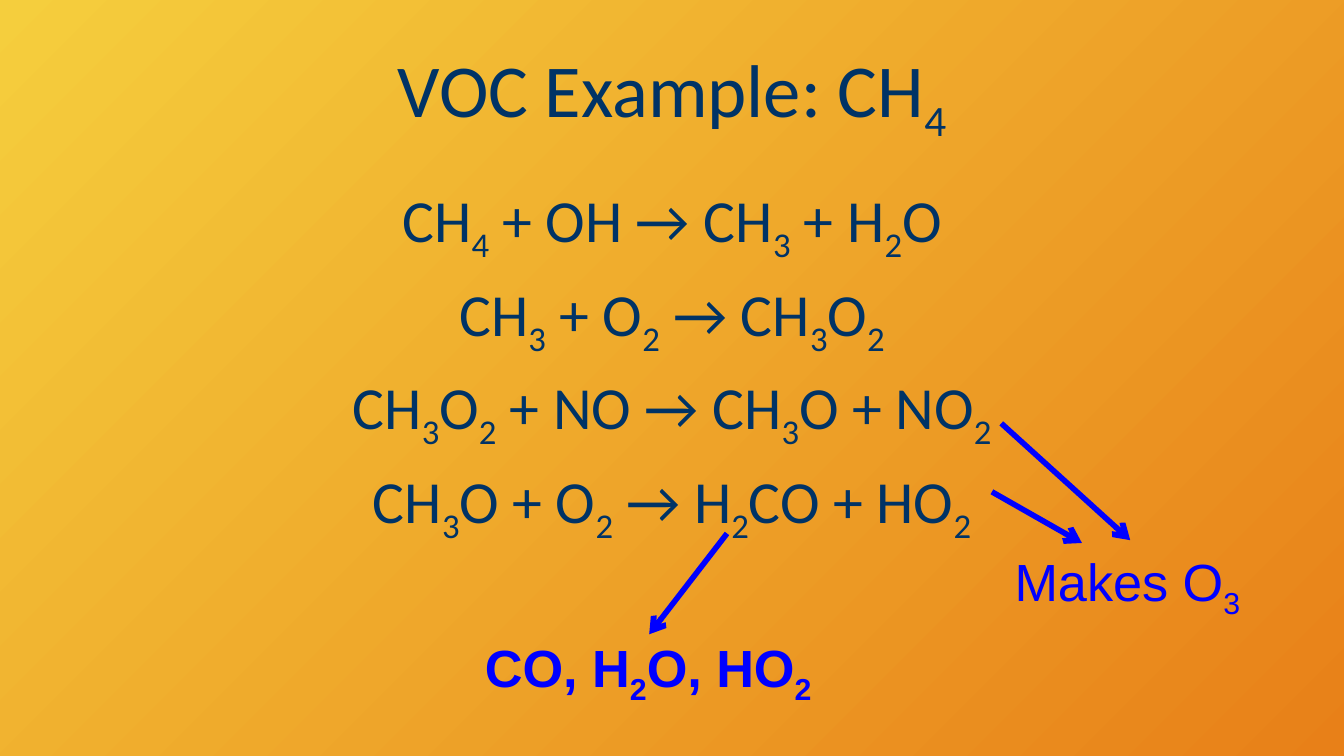
from lxml.etree import SubElement
from pptx import Presentation
from pptx.dml.color import RGBColor as RGB
from pptx.enum.shapes import MSO_CONNECTOR as Connector
from pptx.enum.text import MSO_ANCHOR as Anchor, MSO_AUTO_SIZE as AutoSize, PP_ALIGN as Align
from pptx.oxml.ns import qn
from pptx.util import Pt

TITLE = "VOC Example: CH_4"
REACTIONS = [
    "CH_4 + OH → CH_3 + H_2O",
    "CH_3 + O_2 → CH_3O_2",
    "CH_3O_2 + NO → CH_3O + NO_2",
]
LAST_REACTION = "CH_3O + O_2 → H_2CO + HO_2"
OZONE = "Makes O_3"
PRODUCTS = "CO, H_2O, HO_2"
ARROWS = [
    ((536.4, 226.8), (605.5, 289.4)),
    ((389.5, 285.8), (347.8, 339.8)),
    ((531.4, 263.5), (579.6, 290.9)),
]

THEME = {
    "background": ("F5CE3D", "E88018"),
    "ink": "003366",
    "accent": "0000FF",
    "body_font": "Calibri",
    "note_font": "Arial",
    "title": 40,
    "body": 32,
    "note": 28,
    "line": 3,
}
WIDTH, HEIGHT, MARGIN = 720, 405, 36


def add_text(s, lines, box, *, size, font=THEME["body_font"], color=THEME["ink"],
             bold=False, align=Align.CENTER, anchor=Anchor.TOP, wrap=True, before=0):
    """Add lines of text, lowering each digit that follows an underscore."""
    tf = s.shapes.add_textbox(*map(Pt, box)).text_frame
    tf.word_wrap = wrap
    tf.auto_size = AutoSize.NONE if wrap else AutoSize.SHAPE_TO_FIT_TEXT
    tf.vertical_anchor = anchor
    for i, line in enumerate(lines):
        p = tf.paragraphs[0] if i == 0 else tf.add_paragraph()
        p.alignment = align
        p.space_before = Pt(before)
        first, *rest = line.split("_")
        pieces = [(first, False)]
        for part in rest:
            pieces += [(part[0], True), (part[1:], False)]
        for text, lowered in pieces:
            if not text:
                continue
            r = p.add_run()
            r.text = text
            r.font.name, r.font.size, r.font.bold = font, Pt(size), bold
            r.font.color.rgb = RGB.from_string(color)
            if lowered:
                r.font._element.set("baseline", "-25000")


def add_arrow(s, start, end):
    c = s.shapes.add_connector(Connector.STRAIGHT, *map(Pt, start + end))
    c.line.color.rgb = RGB.from_string(THEME["accent"])
    c.line.width = Pt(THEME["line"])
    SubElement(c.line._get_or_add_ln(), qn("a:tailEnd"), type="arrow")
    SubElement(c._element.spPr, qn("a:effectLst"))


def paint_background(s):
    fill = s.background.fill
    fill.gradient()
    fill.gradient_angle = 315
    for stop, color, position in zip(fill.gradient_stops, THEME["background"], (0, 1)):
        stop.color.rgb = RGB.from_string(color)
        stop.position = position


def main():
    prs = Presentation()
    prs.slide_width, prs.slide_height = Pt(WIDTH), Pt(HEIGHT)
    s = prs.slides.add_slide(prs.slide_layouts[6])
    paint_background(s)

    span = WIDTH - 2 * MARGIN
    add_text(s, [TITLE], (MARGIN, 16.5, span, 67.5), size=THEME["title"], anchor=Anchor.MIDDLE)
    body = {"size": THEME["body"], "before": 0.2 * THEME["body"]}
    add_text(s, REACTIONS, (MARGIN, 94.5, span, 108), **body)
    add_text(s, [LAST_REACTION], (MARGIN, 244.8, span, 36), **body)

    note = {"size": THEME["note"], "font": THEME["note_font"], "color": THEME["accent"],
            "align": Align.LEFT, "wrap": False}
    add_text(s, [OZONE], (536.4, 290.9, 138.2, 41), **note)
    add_text(s, [PRODUCTS], (252.7, 337, 193.7, 41), bold=True, **note)

    for start, end in ARROWS:
        add_arrow(s, start, end)
    prs.save("out.pptx")


if __name__ == "__main__":
    main()
